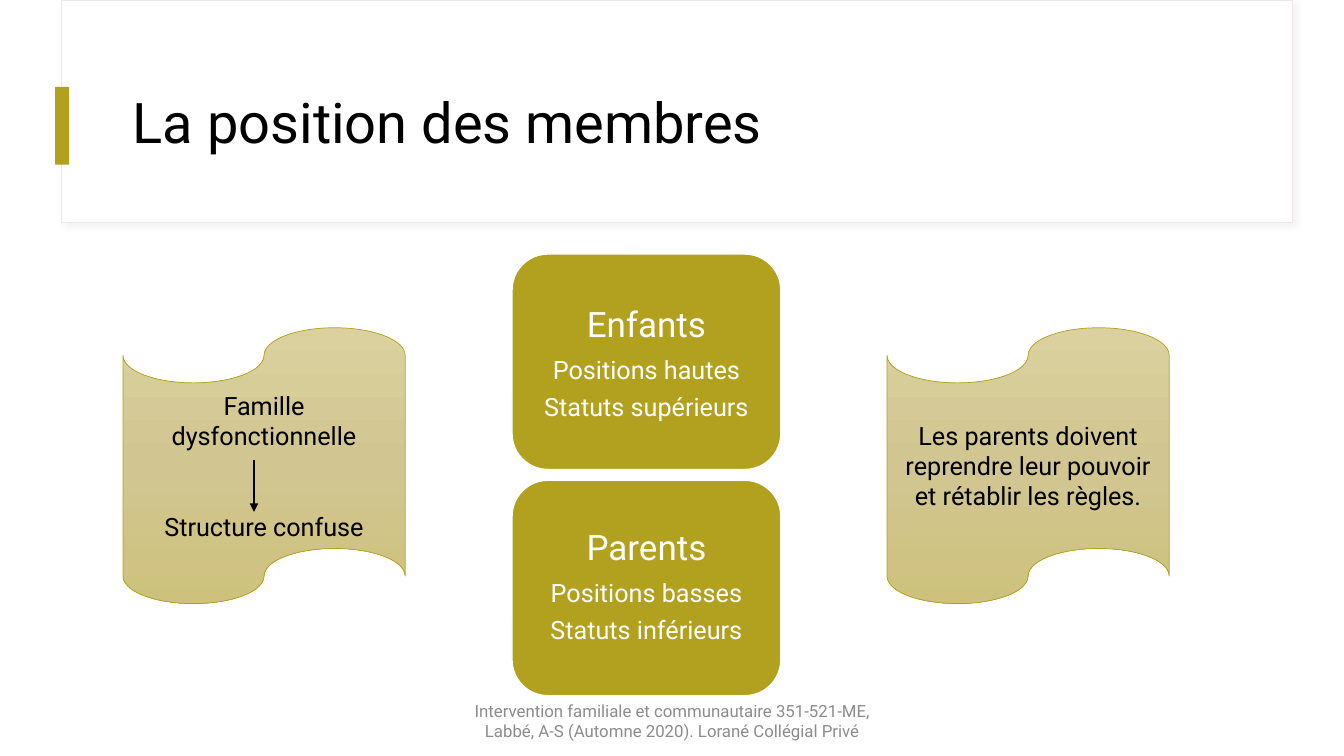
"""Build the slide on the position of family members."""
from copy import deepcopy

from lxml import etree
from pptx import Presentation
from pptx.dml.color import RGBColor
from pptx.enum.shapes import MSO_CONNECTOR, MSO_SHAPE
from pptx.enum.text import MSO_ANCHOR, PP_ALIGN
from pptx.oxml.ns import qn
from pptx.util import Inches, Pt

RECT, CARD, TAPE = MSO_SHAPE.RECTANGLE, MSO_SHAPE.ROUNDED_RECTANGLE, MSO_SHAPE.FLOWCHART_PUNCHED_TAPE
STRAIGHT = MSO_CONNECTOR.STRAIGHT
LEFT, CENTER, MIDDLE = PP_ALIGN.LEFT, PP_ALIGN.CENTER, MSO_ANCHOR.MIDDLE
THEME = {
    "font": "Roboto", "black": "000000", "white": "FFFFFF", "olive": "B1A11F",
    "frame": "F0E5ED", "shadow": "D9D9D9", "grey": "8C8C8C",
    "tape": ["DBD19E", "D1C692", "CEC17D"],
    "title": 40, "head": 25, "body": 18, "foot": 12,
}

prs = Presentation()
prs.slide_width, prs.slide_height = Inches(13.33), Inches(7.5)
s = prs.slides.add_slide(prs.slide_layouts[6])


def place(x, y, w, h, kind=None, fill=None, line=None, width=1):
    """Add a shape, or a text box without a kind, at percentages of the slide."""
    box = [int(prs.slide_width * x / 100), int(prs.slide_height * y / 100),
           int(prs.slide_width * w / 100), int(prs.slide_height * h / 100)]
    if kind is None:
        return s.shapes.add_textbox(*box)
    sp = s.shapes.add_shape(kind, *box)
    sp.shadow.inherit = False
    if fill:
        sp.fill.solid()
        sp.fill.fore_color.rgb = RGBColor.from_string(THEME[fill])
    if line:
        sp.line.color.rgb = RGBColor.from_string(THEME[line])
        sp.line.width = Pt(width)
    else:
        sp.line.fill.background()
    return sp


def write(sp, lines, color, align=CENTER, spacing=1.0):
    """Fill a shape with (text, size, space before, space after) paragraphs."""
    tf = sp.text_frame
    tf.word_wrap, tf.vertical_anchor = True, MIDDLE
    for i, (text, size, before, after) in enumerate(lines):
        p = tf.add_paragraph() if i else tf.paragraphs[0]
        form = {"alignment": align, "line_spacing": spacing,
                "space_before": Pt(before), "space_after": Pt(after)}
        for name, value in form.items():
            setattr(p, name, value)
        r = p.add_run()
        r.text = text
        r.font.name, r.font.size = THEME["font"], Pt(THEME[size])
        r.font.color.rgb = RGBColor.from_string(THEME[color])


frame = place(4.6, 0, 91.55, 29.4, RECT, "white", "frame", 0.75)
effects = frame._element.spPr.find(qn("a:effectLst"))
shadow = etree.SubElement(effects, qn("a:outerShdw"), blurRad=str(Pt(4)),
                          dist=str(Pt(3)), dir="2700000", algn="tl", rotWithShape="0")
tint = etree.SubElement(shadow, qn("a:srgbClr"), val=THEME["shadow"])
etree.SubElement(tint, qn("a:alpha"), val="30000")

place(4.1, 11.5, 1.05, 10.3, RECT, "olive")
title = place(9.15, 8, 83.4, 17.2)
write(title, [("La position des membres", "title", 0, 0)], "black", LEFT, 0.9)

cards = [
    ("Enfants", "Positions hautes", "Statuts supérieurs", 0.1),
    ("Parents", "Positions basses", "Statuts inférieurs", 0.05),
]
for row, (head, place_text, status, inset) in enumerate(cards):
    card = place(38.1, 33.6 + 29.93 * row, 20, 28.5, CARD, "olive", "white")
    card.text_frame.margin_top = Inches(inset)
    write(card, [(head, "head", 0, 9), (place_text, "body", 0, 7), (status, "body", 0, 7)],
          "white", CENTER, 0.9)

tapes = [
    (9.15, [("Famille dysfonctionnelle", "body", 0, 0), ("Structure confuse", "body", 43, 0)]),
    (66, [("Les parents doivent reprendre leur pouvoir et rétablir les règles.", "body", 0, 0)]),
]
for x, lines in tapes:
    tape = place(x, 43.35, 21, 36.5, TAPE, None, "olive", 0.5)
    tape.fill.gradient()
    tape.fill.gradient_angle = 270
    stops = tape._element.spPr.find(qn("a:gradFill")).find(qn("a:gsLst"))
    stops.insert(1, deepcopy(stops[0]))
    for i, stop in enumerate(tape.fill.gradient_stops):
        stop.color.rgb = RGBColor.from_string(THEME["tape"][i])
        stop.position = i / 2
    write(tape, lines, "black")

x, top, bottom = (int(prs.slide_width * 0.189), int(prs.slide_height * 0.608),
                  int(prs.slide_height * 0.677))
arrow = s.shapes.add_connector(STRAIGHT, x, top, x, bottom)
arrow.line.color.rgb = RGBColor.from_string(THEME["black"])
arrow.line.width = Pt(1.5)
etree.SubElement(arrow.line._get_or_add_ln(), qn("a:tailEnd"), type="triangle")
etree.SubElement(arrow._element.spPr, qn("a:effectLst"))

footer = place(33.15, 92.65, 33.75, 5.35)
write(footer, [("Intervention familiale et communautaire 351-521-ME, "
                "Labbé, A-S (Automne 2020). Lorané Collégial Privé", "foot", 0, 0)], "grey")

prs.save("out.pptx")
